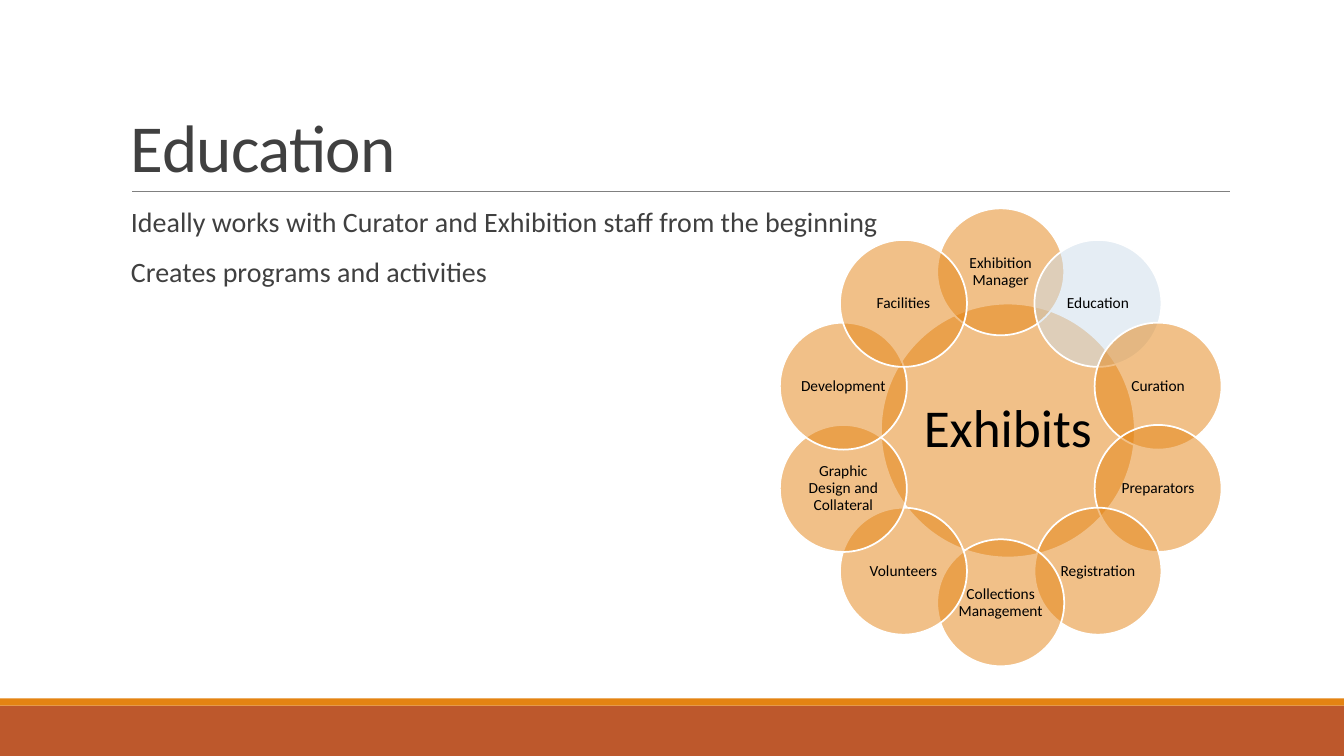
"""Build the Education slide with its ring of exhibit roles."""
import math

from lxml import etree
from pptx import Presentation
from pptx.dml.color import RGBColor
from pptx.enum.shapes import MSO_CONNECTOR, MSO_SHAPE
from pptx.enum.text import MSO_ANCHOR, MSO_AUTO_SIZE, PP_ALIGN
from pptx.oxml.ns import qn
from pptx.util import Cm, Pt

RECT, OVAL = MSO_SHAPE.RECTANGLE, MSO_SHAPE.OVAL
STRAIGHT = MSO_CONNECTOR.STRAIGHT
TOP, MIDDLE, BOTTOM = MSO_ANCHOR.TOP, MSO_ANCHOR.MIDDLE, MSO_ANCHOR.BOTTOM
LEFT, CENTER = PP_ALIGN.LEFT, PP_ALIGN.CENTER
NO_FIT = MSO_AUTO_SIZE.NONE

FONT = "Calibri"
COLORS = {
    "rust": "BD582C",
    "orange": "E48312",
    "pale": "CCDDEA",
    "rule": "808080",
    "text": "404040",
    "label": "000000",
    "white": "FFFFFF",
}
WIDTH, HEIGHT = 33.87, 19.05
HUB_X, HUB_Y, HUB_SIZE = 25.4, 10.85, 6.4
RING_X, RING_Y, RING_RADIUS, ROLE_SIZE = 25.22, 11.02, 4.17, 3.2
POINTS = [
    "Ideally works with Curator and Exhibition staff from the beginning",
    "Creates programs and activities",
]
ROLES = [
    "Exhibition Manager", "Education", "Curation", "Preparators",
    "Registration", "Collections Management", "Volunteers",
    "Graphic Design and Collateral", "Development", "Facilities",
]


def rgb(name):
    """Return the named colour."""
    return RGBColor.from_string(COLORS[name])


def set_frame(tf, anchor, side, edge):
    """Set wrapping, anchor and insets of a text frame."""
    tf.word_wrap = True
    tf.auto_size = NO_FIT
    tf.vertical_anchor = anchor
    tf.margin_left = tf.margin_right = Cm(side)
    tf.margin_top = tf.margin_bottom = Cm(edge)


def format_paragraph(p, size, color, align, spacing):
    """Format a paragraph and its runs."""
    p.alignment = align
    p.line_spacing = spacing
    for r in p.runs:
        r.font.name = FONT
        r.font.size = Pt(size)
        r.font.color.rgb = rgb(color)


def add_band(s, top, height, color):
    """Add a full-width band."""
    sp = s.shapes.add_shape(RECT, 0, Cm(top), Cm(WIDTH), Cm(height))
    sp.shadow.inherit = False
    sp.fill.solid()
    sp.fill.fore_color.rgb = rgb(color)
    sp.line.fill.background()


def add_rule(s, left, right, y):
    """Add the thin line under the title."""
    line = s.shapes.add_connector(STRAIGHT, Cm(left), Cm(y), Cm(right), Cm(y))
    line.line.color.rgb = rgb("rule")
    line.line.width = Pt(0.5)
    etree.SubElement(line._element.spPr, qn("a:effectLst"))


def set_title(s, text):
    """Place and format the title placeholder."""
    title = s.shapes.title
    title.left, title.top = Cm(3.05), Cm(0.79)
    title.width, title.height = Cm(27.94), Cm(4.04)
    tf = title.text_frame
    tf.text = text
    set_frame(tf, BOTTOM, 0.25, 0.13)
    p = tf.paragraphs[0]
    format_paragraph(p, 48, "text", LEFT, 0.85)
    p.runs[0]._r.get_or_add_rPr().set("spc", "-50")


def add_points(s, points):
    """Add the body paragraphs."""
    box = s.shapes.add_textbox(Cm(3.05), Cm(5.13), Cm(27.94), Cm(11.18))
    tf = box.text_frame
    tf.text = "\n".join(points)
    set_frame(tf, TOP, 0.25, 0.13)
    for i, p in enumerate(tf.paragraphs):
        format_paragraph(p, 20, "text", LEFT, 0.9)
        p.space_before = Pt(12 if i else 0)
        p.space_after = Pt(2)


def add_circle(s, x, y, size, text, font_size, color):
    """Add a half-transparent labelled circle centred on a point."""
    sp = s.shapes.add_shape(
        OVAL, Cm(x - size / 2), Cm(y - size / 2), Cm(size), Cm(size))
    sp.shadow.inherit = False
    sp.fill.solid()
    sp.fill.fore_color.rgb = rgb(color)
    fill = sp._element.spPr.find(qn("a:solidFill"))
    etree.SubElement(fill[0], qn("a:alpha"), val="50000")
    sp.line.color.rgb = rgb("white")
    sp.line.width = Pt(1.25)
    tf = sp.text_frame
    tf.text = text
    set_frame(tf, MIDDLE, 0.03, 0.03)
    format_paragraph(tf.paragraphs[0], font_size, "label", CENTER, 0.9)


def add_ring(s, roles):
    """Add the hub and the roles clockwise from the top."""
    add_circle(s, HUB_X, HUB_Y, HUB_SIZE, "Exhibits", 38, "orange")
    for i, role in enumerate(roles):
        angle = 2 * math.pi * i / len(roles)
        x = RING_X + RING_RADIUS * math.sin(angle)
        y = RING_Y - RING_RADIUS * math.cos(angle)
        color = "pale" if role == "Education" else "orange"
        add_circle(s, x, y, ROLE_SIZE, role, 11, color)


def main():
    """Build and save the slide."""
    prs = Presentation()
    prs.slide_width, prs.slide_height = Cm(WIDTH), Cm(HEIGHT)
    s = prs.slides.add_slide(prs.slide_layouts[5])
    add_band(s, 17.78, 1.27, "rust")
    add_band(s, 17.6, 0.18, "orange")
    add_rule(s, 3.33, 31, 4.83)
    set_title(s, "Education")
    add_points(s, POINTS)
    add_ring(s, ROLES)
    prs.save("out.pptx")


if __name__ == "__main__":
    main()
